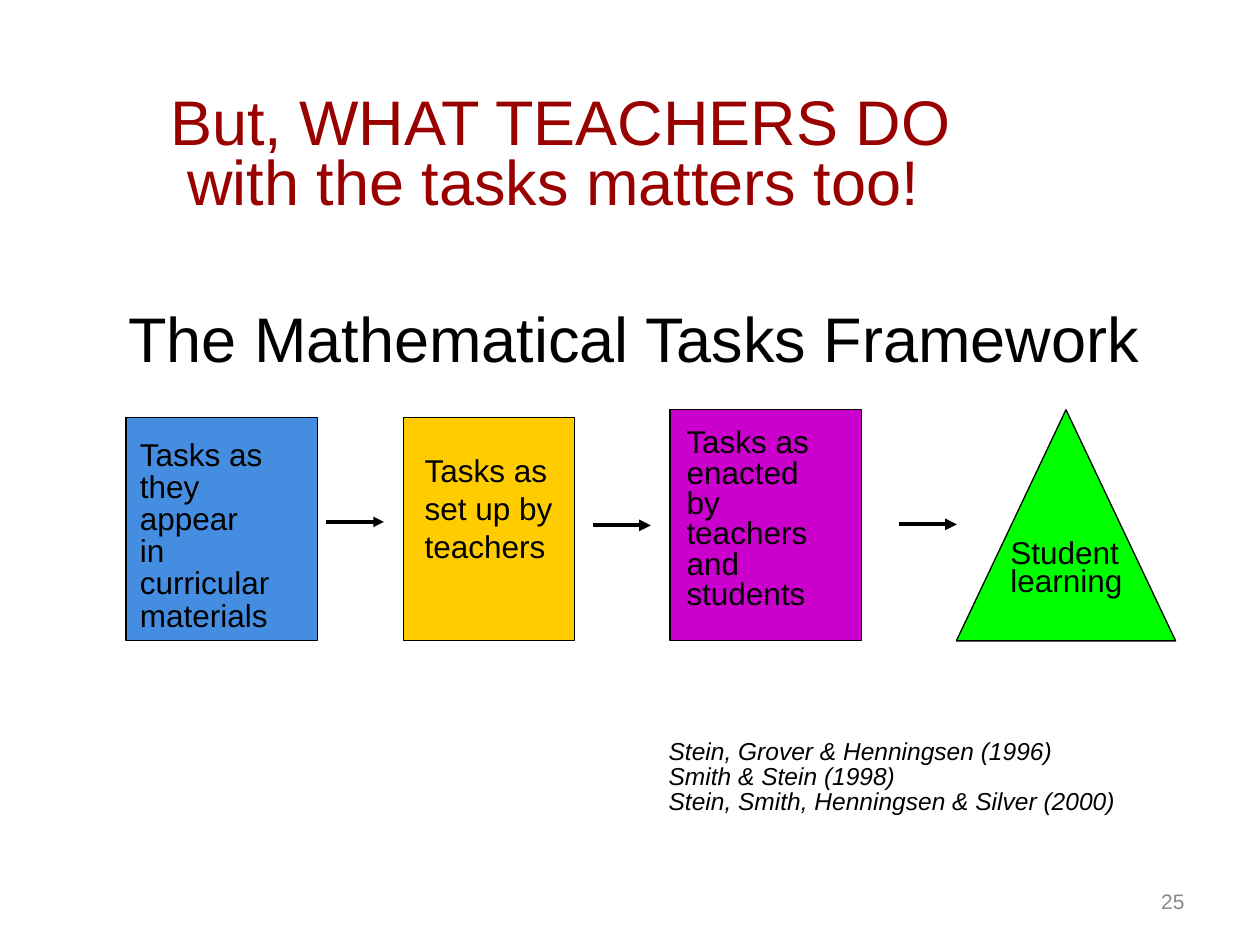
from lxml.etree import SubElement
from pptx import Presentation
from pptx.dml.color import RGBColor
from pptx.enum.shapes import MSO_CONNECTOR as CONN, MSO_SHAPE as SHAPE
from pptx.enum.text import MSO_ANCHOR as ANCHOR, PP_ALIGN as ALIGN
from pptx.oxml.ns import qn
from pptx.util import Cm, Pt


def rgb(value):
    return RGBColor.from_string(value)


def write(tf, text, size=18, color="000000", italic=False, spacing=1.0,
          align=ALIGN.LEFT, font="Arial"):
    """Write each line of text as its own paragraph."""
    for i, line in enumerate(text.split("\n")):
        p = tf.paragraphs[0] if i == 0 else tf.add_paragraph()
        p.alignment, p.line_spacing = align, spacing
        r = p.add_run()
        r.text = line
        r.font.name, r.font.size, r.font.italic = font, Pt(size), italic
        r.font.color.rgb = rgb(color)


class Deck:
    LINE = "000000"

    def __init__(self, width, height):
        self.prs = Presentation()
        self.prs.slide_width, self.prs.slide_height = Cm(width), Cm(height)
        self.s = self.prs.slides.add_slide(self.prs.slide_layouts[6])

    def text(self, x, y, w, h, text, wrap=True, anchor=ANCHOR.TOP, **fmt):
        tf = self.s.shapes.add_textbox(Cm(x), Cm(y), Cm(w), Cm(h)).text_frame
        tf.word_wrap, tf.vertical_anchor = wrap, anchor
        write(tf, text, **fmt)
        return tf

    def shape(self, kind, x, y, w, h, fill):
        sp = self.s.shapes.add_shape(kind, Cm(x), Cm(y), Cm(w), Cm(h))
        sp.shadow.inherit = False
        sp.fill.solid()
        sp.fill.fore_color.rgb = rgb(fill)
        sp.line.color.rgb = rgb(self.LINE)
        sp.line.width = Pt(0.75)

    def arrow(self, x, y, length, width):
        c = self.s.shapes.add_connector(CONN.STRAIGHT, Cm(x), Cm(y), Cm(x + length), Cm(y))
        c.line.color.rgb = rgb(self.LINE)
        c.line.width = Pt(width)
        SubElement(c.line._get_or_add_ln(), qn("a:tailEnd"), type="triangle")
        SubElement(c._element.spPr, qn("a:effectLst"))


def main():
    deck = Deck(25.4, 19.05)

    # Title, second line slightly indented
    tf = deck.text(3.18, 1.9, 19.33, 2.54,
                   "But, WHAT TEACHERS DO\nwith the tasks matters too!",
                   anchor=ANCHOR.MIDDLE, size=36, color="990000", spacing=0.8)
    tf.paragraphs[1]._p.get_or_add_pPr().set("marL", str(Cm(0.35)))

    # References and framework heading
    deck.text(13.23, 14.81, 11.43, 2.72,
              "Stein, Grover & Henningsen (1996)\nSmith & Stein (1998)\n"
              "Stein, Smith, Henningsen & Silver (2000)",
              size=14, italic=True, spacing=0.85)
    deck.text(2.34, 5.92, 21.06, 1.78, "The Mathematical Tasks Framework",
              wrap=False, size=36)

    # Framework stages, standing on one base line
    base = 12.92
    for kind, x, w, h, fill in [
        (SHAPE.RECTANGLE, 2.54, 3.86, 4.5, "448DE1"),
        (SHAPE.RECTANGLE, 13.51, 3.86, 4.66, "CC00CC"),
        (SHAPE.RECTANGLE, 8.13, 3.45, 4.5, "FFCC00"),
        (SHAPE.ISOSCELES_TRIANGLE, 19.28, 4.42, 4.66, "00FF00"),
    ]:
        deck.shape(kind, x, base - h, w, h, fill)

    # Arrows between stages
    for x, y, width in [(6.58, 10.52, 2), (11.96, 10.59, 2.25), (18.13, 10.57, 2.25)]:
        deck.arrow(x, y, 1.16, width)

    # Stage labels
    deck.text(8.31, 8.97, 3.25, 2.54, "Tasks as\nset up by\nteachers", wrap=False)
    for x, y, w, h, spacing, label in [
        (2.57, 8.76, 3.66, 4.14, 0.85, "Tasks as\nthey appear\nin curricular\nmaterials"),
        (13.59, 8.54, 3.56, 4.06, 0.8, "Tasks as\nenacted by\nteachers and\nstudents"),
        (20.12, 10.8, 3, 1.4, 0.75, "Student\nlearning"),
    ]:
        deck.text(x, y, w, h, label, spacing=spacing)

    # Slide number
    deck.text(18.21, 17.65, 5.92, 1.02, "25", anchor=ANCHOR.MIDDLE,
              size=12, color="898989", align=ALIGN.RIGHT)

    deck.prs.save("out.pptx")


if __name__ == "__main__":
    main()
